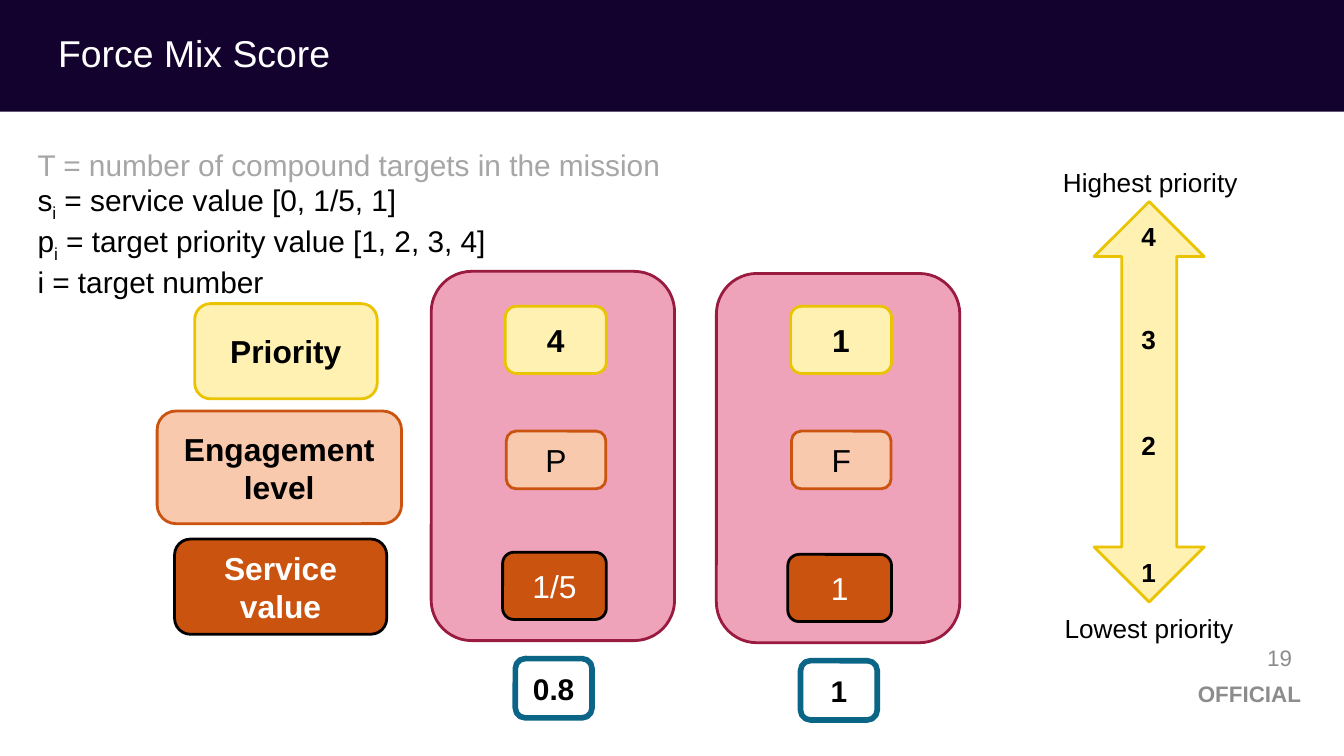
from dataclasses import dataclass

from pptx import Presentation
from pptx import util as u
from pptx.dml.color import RGBColor
from pptx.enum import shapes, text


@dataclass(frozen=True)
class Theme:
    font: str = "Arial"
    header: str = "13022D"
    white: str = "FFFFFF"
    black: str = "000000"
    footer: str = "8C8C8C"
    muted: str = "A6A6A6"
    target: tuple = ("EFA3BA", "9A1B40")
    priority: tuple = ("FEF1B2", "EAC302")
    engagement: tuple = ("F9C9AE", "CB5310")
    service: tuple = ("CB5310", "000000")
    score: tuple = (None, "0B6587")
    title_size: int = 20
    label_size: int = 17
    body_size: int = 16
    scale_size: int = 14
    footer_size: int = 12


THEME = Theme()
ROUNDED = shapes.MSO_SHAPE.ROUNDED_RECTANGLE
ALIGN = text.PP_ALIGN


def style(paragraph, size, color, bold=False, align=ALIGN.LEFT):
    paragraph.alignment = align
    font = paragraph.font
    font.name = THEME.font
    font.size = u.Pt(size)
    font.bold = bold
    font.color.rgb = RGBColor.from_string(color)


def add_block(parent, kind, box, colors, line_width=1.5):
    fill, line = colors
    block = parent.add_shape(kind, *map(u.Cm, box))
    block.shadow.inherit = False
    if fill:
        block.fill.solid()
        block.fill.fore_color.rgb = RGBColor.from_string(fill)
    else:
        block.fill.background()
    if line:
        block.line.color.rgb = RGBColor.from_string(line)
        block.line.width = u.Pt(line_width)
    else:
        block.line.fill.background()
    return block


def add_card(parent, box, colors, words, color=THEME.black, bold=True,
             size=THEME.label_size, line_width=1.5):
    frame = add_block(parent, ROUNDED, box, colors, line_width).text_frame
    frame.word_wrap = True
    frame.vertical_anchor = text.MSO_ANCHOR.MIDDLE
    frame.text = words
    style(frame.paragraphs[0], size, color, bold, ALIGN.CENTER)


def add_caption(parent, box, words, size, color=THEME.black, bold=False,
                align=ALIGN.CENTER, anchor=text.MSO_ANCHOR.TOP):
    frame = parent.add_textbox(*map(u.Cm, box)).text_frame
    frame.word_wrap = True
    frame.vertical_anchor = anchor
    frame.text = words
    style(frame.paragraphs[0], size, color, bold, align)
    return frame


def add_frame(parent):
    middle = text.MSO_ANCHOR.MIDDLE
    add_block(parent, shapes.MSO_SHAPE.RECTANGLE, (0, 0, 25.4, 2.11), (THEME.header, None))
    title = add_caption(parent, (0.1, 0.15, 19, 1.8), "Force Mix Score",
                        THEME.title_size, THEME.white, align=ALIGN.LEFT, anchor=middle)
    title.margin_left = u.Cm(1)
    title.paragraphs[0].line_spacing = 0.9
    marking = add_caption(parent, (3.91, 12.73, 20.78, 0.76), "OFFICIAL",
                          THEME.footer_size, THEME.footer, True, ALIGN.RIGHT, middle)
    marking.margin_right = u.Cm(0.1)
    add_caption(parent, (18.95, 12.14, 5.72, 0.58), "19",
                THEME.footer_size, THEME.footer, align=ALIGN.RIGHT, anchor=middle)


def add_definitions(parent):
    definitions = [
        ("T", "", " = number of compound targets in the mission", THEME.muted),
        ("s", "i", " = service value [0, 1/5, 1]", THEME.black),
        ("p", "i", " = target priority value [1, 2, 3, 4]", THEME.black),
        ("i", "", " = target number", THEME.black),
    ]
    frame = parent.add_textbox(*map(u.Cm, (0.46, 2.64, 12.45, 3))).text_frame
    frame.word_wrap = False
    for index, (symbol, subscript, meaning, color) in enumerate(definitions):
        paragraph = frame.add_paragraph() if index else frame.paragraphs[0]
        style(paragraph, THEME.body_size, color)
        if subscript:
            paragraph.add_run().text = symbol
            lowered = paragraph.add_run()
            lowered.text = subscript
            lowered.font._element.set("baseline", "-25000")
            paragraph.add_run().text = meaning
        else:
            paragraph.add_run().text = symbol + meaning


def add_row_labels(parent):
    add_card(parent, (3.68, 5.74, 3.45, 1.8), THEME.priority, "Priority")
    add_card(parent, (2.97, 7.77, 4.62, 2.13), THEME.engagement, "Engagement level")
    add_card(parent, (3.3, 10.19, 4.01, 1.8), THEME.service, "Service value", THEME.white)


def add_target(parent, left, drop, priority, engagement, service, score):
    add_block(parent, ROUNDED, (left, 5.13 + drop, 4.6, 6.98), THEME.target)
    add_card(parent, (left + 1.4, 5.79, 1.91, 1.27), THEME.priority, priority)
    add_card(parent, (left + 1.42, 8.15, 1.88, 1.09), THEME.engagement, engagement, bold=False)
    add_card(parent, (left + 1.35, 10.44 + drop, 1.96, 1.27), THEME.service,
             service, THEME.white, bold=False)
    add_card(parent, (left + 1.59, 12.45 + drop, 1.45, 1.12), THEME.score,
             score, size=THEME.body_size, line_width=3)


def add_priority_scale(parent):
    scale = parent.add_group_shape().shapes
    add_caption(scale, (19.63, 11.46, 4.17, 0.74), "Lowest priority", THEME.scale_size)
    add_block(scale, shapes.MSO_SHAPE.UP_DOWN_ARROW, (20.68, 3.81, 2.08, 7.57), THEME.priority)
    add_caption(scale, (19.43, 3.02, 4.62, 0.74), "Highest priority", THEME.scale_size)
    for level, top in (("4", 4.04), ("3", 5.99), ("2", 8), ("1", 10.39)):
        add_caption(scale, (20.96, top, 1.5, 0.74), level, THEME.scale_size, bold=True)


def main():
    deck = Presentation()
    deck.slide_width, deck.slide_height = u.Cm(25.4), u.Cm(14.29)
    parent = deck.slides.add_slide(deck.slide_layouts[6]).shapes
    add_frame(parent)
    add_definitions(parent)
    add_row_labels(parent)
    add_target(parent, 8.15, 0, "4", "P", "1/5", "0.8")
    add_target(parent, 13.54, 0.04, "1", "F", "1", "1")
    add_priority_scale(parent)
    deck.save("out.pptx")


if __name__ == "__main__":
    main()
